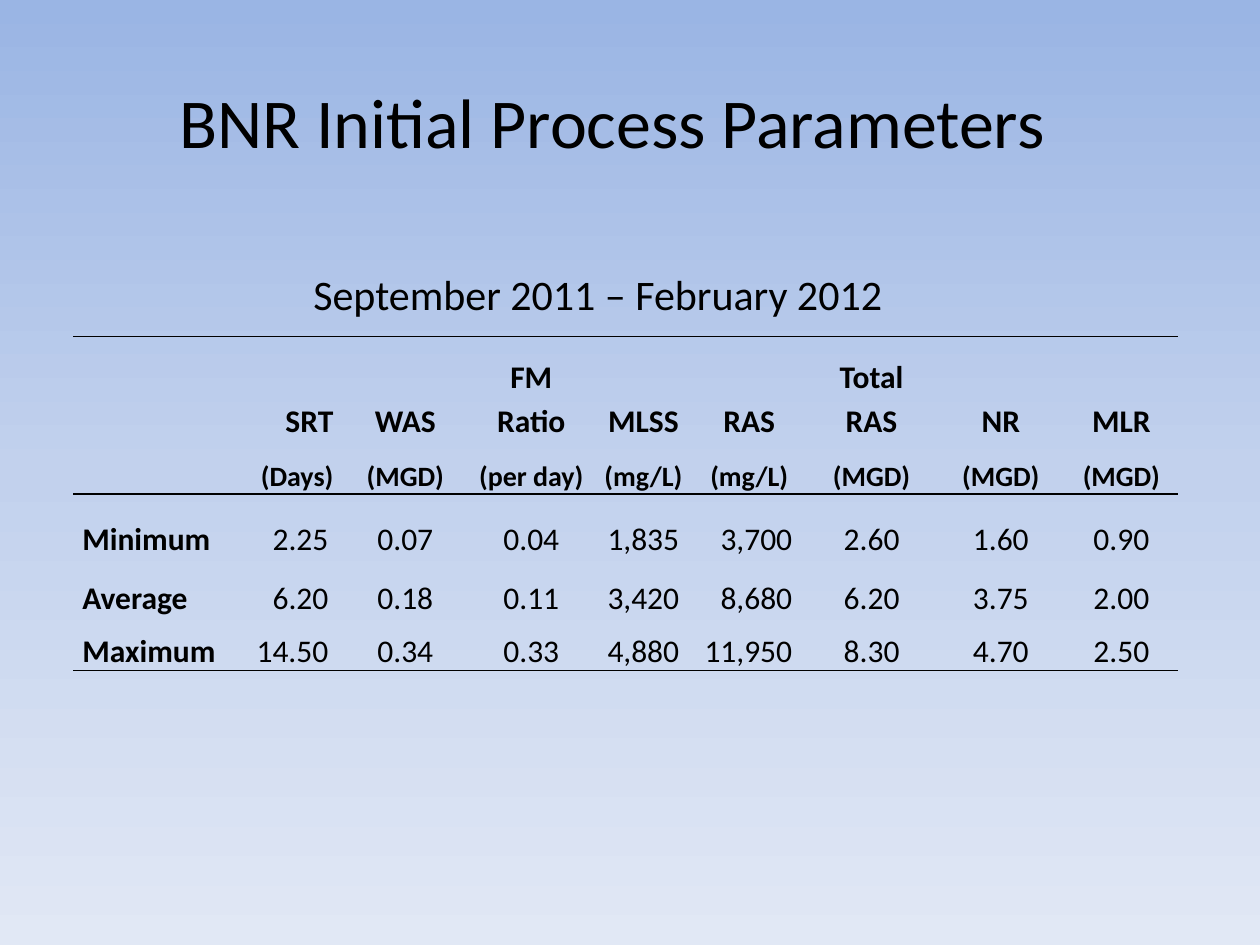
"""Build a slide with a table of initial BNR process parameters."""
from lxml import etree
from pptx import Presentation
from pptx.dml.color import RGBColor
from pptx.enum.text import MSO_ANCHOR, PP_ALIGN
from pptx.oxml.ns import qn
from pptx.util import Cm, Pt

MIDDLE, BOTTOM = MSO_ANCHOR.MIDDLE, MSO_ANCHOR.BOTTOM
LEFT, CENTER, RIGHT = PP_ALIGN.LEFT, PP_ALIGN.CENTER, PP_ALIGN.RIGHT
TITLE_ONLY = 5
FONT = "Calibri"
PLAIN_TABLE_STYLE = "{2D5ABB26-0587-4C30-8999-92F81FD0307C}"
COLORS = {"text": "000000", "rule": "000000",
          "top": "9AB5E4", "middle": "C2D1ED", "bottom": "E1E8F5"}

COLUMN_WIDTHS = [3.18, 2.24, 2.54, 2.54, 1.98, 2.29, 2.64, 2.57, 2.29]
ROW_HEIGHTS = [2.11, 1.07, 1.3, 1.19, 1.07]
ROWS = [
    ["", "SRT", "WAS", "FM Ratio", "MLSS", "RAS", "Total RAS", "NR", "MLR"],
    ["", "(Days)", "(MGD)", "(per day)", "(mg/L)", "(mg/L)", "(MGD)", "(MGD)", "(MGD)"],
    ["Minimum", "2.25", "0.07", "0.04", "1,835", "3,700", "2.60", "1.60", "0.90"],
    ["Average", "6.20", "0.18", "0.11", "3,420", "8,680", "6.20", "3.75", "2.00"],
    ["Maximum", "14.50", "0.34", "0.33", "4,880", "11,950", "8.30", "4.70", "2.50"],
]
UNIT_ROW, FIRST_DATA_ROW, LAST_ROW = 1, 2, len(ROWS) - 1
SRT_COLUMN, RAS_COLUMN = 1, 5


def set_background(slide):
    """Fill the slide background with a three-stop vertical gradient."""
    fill = slide.background.fill
    fill.gradient()
    fill.gradient_angle = 270
    stops = slide.element.xpath(".//p:bg//a:gsLst")[0]
    for stop in list(stops):
        stops.remove(stop)
    for position, name in ((0, "top"), (50000, "middle"), (100000, "bottom")):
        stop = etree.SubElement(stops, qn("a:gs"), pos=str(position))
        etree.SubElement(stop, qn("a:srgbClr"), val=COLORS[name])


def write_text(text_frame, text, size, alignment, bold=False):
    """Write one formatted paragraph and return it."""
    paragraph = text_frame.paragraphs[0]
    paragraph.text = text
    paragraph.alignment = alignment
    font = paragraph.font
    font.name, font.size, font.bold = FONT, Pt(size), bold
    font.color.rgb = RGBColor.from_string(COLORS["text"])
    return paragraph


def add_title(slide, text):
    """Place and format the title placeholder."""
    title = slide.shapes.title
    title.left, title.top, title.width, title.height = Cm(1.07), Cm(0.84), Cm(22.86), Cm(3.18)
    title.text_frame.vertical_anchor = MIDDLE
    write_text(title.text_frame, text, 40, CENTER)


def add_subtitle(slide, text):
    """Add the centred period above the table."""
    box = slide.shapes.add_textbox(Cm(3.38), Cm(5.28), Cm(17.35), Cm(1.27))
    box.text_frame.word_wrap = True
    box.text_frame.vertical_anchor = MIDDLE
    write_text(box.text_frame, text, 24, CENTER)


def add_rule(cell, side):
    """Draw a one-point border on one side of a cell."""
    line = etree.SubElement(cell._tc.get_or_add_tcPr(), qn(f"a:{side}"), w=str(Pt(1)))
    fill = etree.SubElement(line, qn("a:solidFill"))
    etree.SubElement(fill, qn("a:srgbClr"), val=COLORS["rule"])


def format_cell(cell, text, row, column):
    """Write a table cell and set its borders, margins and alignment."""
    is_data = row >= FIRST_DATA_ROW
    if column == 0:
        alignment = LEFT
    elif column == SRT_COLUMN or (is_data and column == RAS_COLUMN):
        alignment = RIGHT
    else:
        alignment = CENTER
    if row == 0:
        add_rule(cell, "lnT")
    if row in (UNIT_ROW, LAST_ROW):
        add_rule(cell, "lnB")
    cell.fill.background()
    cell.vertical_anchor = BOTTOM
    cell.margin_left = Cm(0.18)
    cell.margin_right = Cm(0.28 if is_data and alignment == RIGHT else 0.18)
    cell.margin_top = cell.margin_bottom = Cm(0)
    size = 16 if row == UNIT_ROW else 18
    bold = not is_data or column == 0
    write_text(cell.text_frame, text, size, alignment, bold).line_spacing = 1.15


def add_parameter_table(slide):
    """Add the ruled table of process parameters."""
    frame = slide.shapes.add_table(len(ROWS), len(COLUMN_WIDTHS), Cm(1.48), Cm(6.78),
                                   Cm(sum(COLUMN_WIDTHS)), Cm(sum(ROW_HEIGHTS)))
    table = frame.table
    table.first_row = table.horz_banding = False
    table._tbl.xpath("./a:tblPr/a:tableStyleId")[0].text = PLAIN_TABLE_STYLE
    for column, width in zip(table.columns, COLUMN_WIDTHS):
        column.width = Cm(width)
    for row, height in zip(table.rows, ROW_HEIGHTS):
        row.height = Cm(height)
    for row, values in enumerate(ROWS):
        for column, value in enumerate(values):
            format_cell(table.cell(row, column), value, row, column)


def main():
    """Create and save the presentation."""
    presentation = Presentation()
    presentation.slide_width, presentation.slide_height = Cm(25.4), Cm(19.05)
    slide = presentation.slides.add_slide(presentation.slide_layouts[TITLE_ONLY])
    set_background(slide)
    add_title(slide, "BNR Initial Process Parameters ")
    add_parameter_table(slide)
    add_subtitle(slide, "September 2011 – February 2012")
    presentation.save("out.pptx")


if __name__ == "__main__":
    main()
